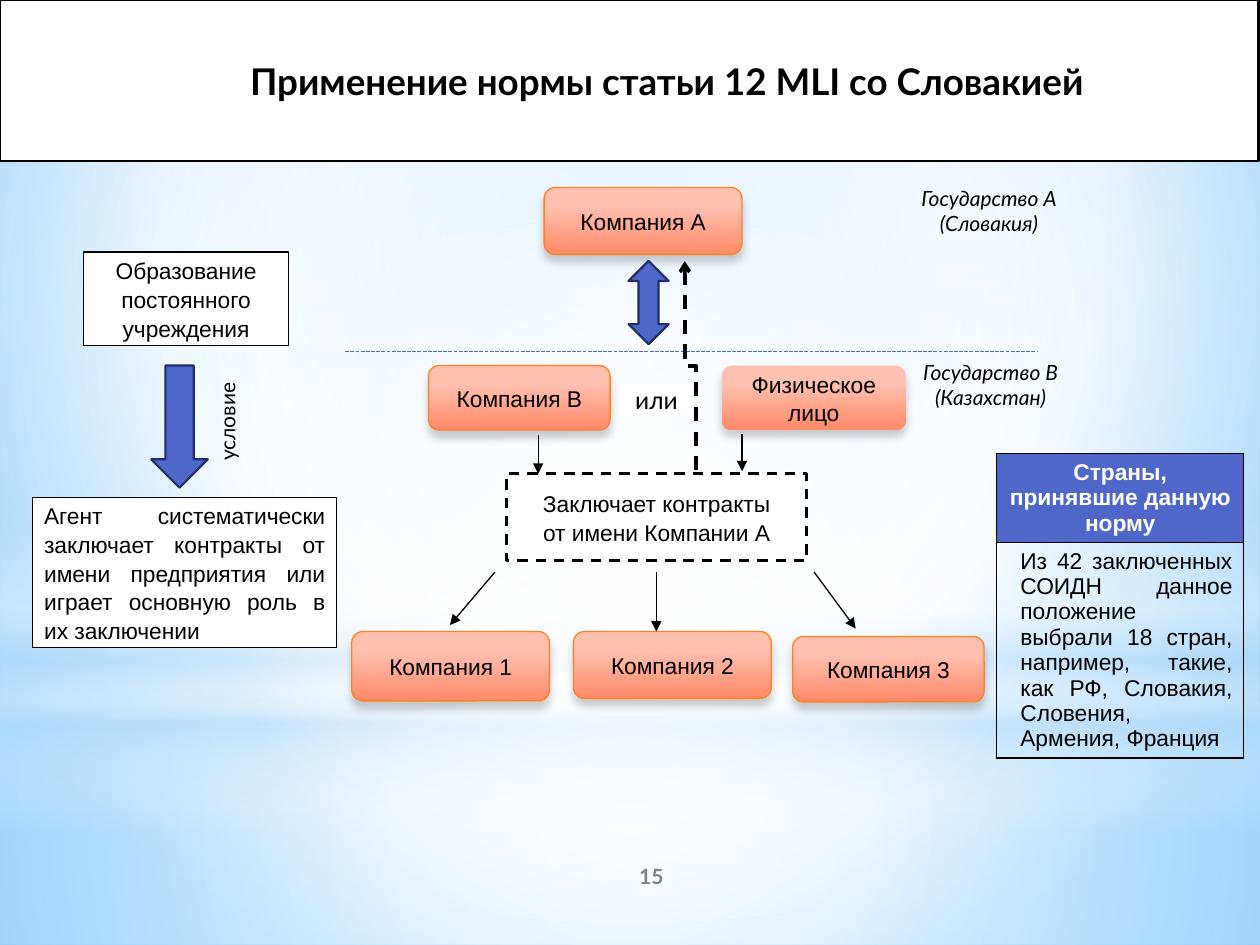
from dataclasses import dataclass
from typing import Optional

from lxml.etree import SubElement
from pptx import Presentation
from pptx.dml.color import RGBColor
from pptx.enum.dml import MSO_LINE
from pptx.enum.shapes import MSO_CONNECTOR, MSO_SHAPE
from pptx.enum.text import MSO_ANCHOR, PP_ALIGN
from pptx.oxml import parse_xml
from pptx.oxml.ns import nsdecls, qn
from pptx.util import Cm, Pt

COLORS = {
    "black": "000000", "white": "FFFFFF", "grey": "808080",
    "blue": "4E67C8", "navy": "1F2E69", "orange": "FF8021",
    "peach": "FFC0AF", "coral": "FF8968",
    "sky": "9ED5FF", "pale": "B4DCFA", "azure": "5BB9FF",
}
CENTRE = (50, 50, 50, 50)
CARD_STOPS = [(28, "peach"), (100, "coral")]


@dataclass
class Box:
    at: tuple  # left, top, width, height in cm
    text: str = ""
    shape: Optional[MSO_SHAPE] = MSO_SHAPE.RECTANGLE  # None for a text box
    fill: Optional[str] = "white"
    line: Optional[str] = "black"
    weight: float = 0.75
    dash: Optional[MSO_LINE] = None
    size: float = 13
    font: str = "Arial"
    color: str = "black"
    bold: bool = False
    italic: bool = False
    align: PP_ALIGN = PP_ALIGN.CENTER
    left_inset: float = 0.23
    spacing: float = 1.05
    rotation: float = 0


@dataclass
class Arrow:
    start: tuple
    end: tuple
    kind: MSO_CONNECTOR = MSO_CONNECTOR.STRAIGHT
    color: str = "black"
    weight: float = 0.75
    dash: Optional[MSO_LINE] = None
    head: Optional[str] = "triangle"
    rotation: int = 0


def rgb(name: str) -> RGBColor:
    return RGBColor.from_string(COLORS[name])


def set_gradient(fill, parent, stops: list, focus: Optional[tuple] = None) -> None:
    """Stops are (position, colour[, opacity]); without a focus the gradient runs downwards."""
    fill.gradient()
    xml = ""
    for pos, color, *opacity in stops:
        alpha = f'<a:alpha val="{opacity[0] * 1000}"/>' if opacity else ""
        xml += (f'<a:gs pos="{pos * 1000}"><a:srgbClr val="{COLORS[color]}">'
                f'{alpha}</a:srgbClr></a:gs>')
    if focus:
        sides = " ".join(f'{k}="{v * 1000}"' for k, v in zip("ltrb", focus))
        shade = f'<a:path path="circle"><a:fillToRect {sides}/></a:path>'
    else:
        shade = '<a:lin ang="5400000" scaled="0"/>'
    grad = parse_xml(f'<a:gradFill {nsdecls("a")} rotWithShape="1">'
                     f'<a:gsLst>{xml}</a:gsLst>{shade}</a:gradFill>')
    parent.replace(parent.find(qn("a:gradFill")), grad)


def add_shadow(sp) -> None:
    effects = sp.element.spPr.find(qn("a:effectLst"))
    effects.append(parse_xml(
        f'<a:outerShdw {nsdecls("a")} blurRad="63500" dist="50800" dir="5400000" rotWithShape="0">'
        '<a:srgbClr val="000000"><a:alpha val="20000"/></a:srgbClr></a:outerShdw>'))


def style_font(font, size: float, name: str, color: str, bold=False, italic=False) -> None:
    font.size, font.name = Pt(size), name
    font.bold, font.italic = bold, italic
    font.color.rgb = rgb(color)


def write_text(tf, box: Box) -> None:
    tf.word_wrap = True
    tf.vertical_anchor = MSO_ANCHOR.MIDDLE
    tf.margin_left, tf.margin_right = Cm(box.left_inset), Cm(0.23)
    tf.margin_top = tf.margin_bottom = Cm(0.1)
    tf.text = box.text
    for p in tf.paragraphs:
        p.alignment = box.align
        p.line_spacing = box.spacing
        style_font(p.font, box.size, box.font, box.color, box.bold, box.italic)


def draw_box(s, box: Box):
    at = [Cm(v) for v in box.at]
    if box.shape is None:
        sp = s.shapes.add_textbox(*at)
    else:
        sp = s.shapes.add_shape(box.shape, *at)
        sp.shadow.inherit = False
        if box.fill:
            sp.fill.solid()
            sp.fill.fore_color.rgb = rgb(box.fill)
        if box.line:
            sp.line.color.rgb = rgb(box.line)
            sp.line.width = Pt(box.weight)
            sp.line.dash_style = box.dash
        else:
            sp.line.fill.background()
    sp.rotation = box.rotation
    if box.text:
        write_text(sp.text_frame, box)
    return sp


def draw_card(s, text: str, at: tuple, line: Optional[str] = "orange") -> None:
    sp = draw_box(s, Box(at, text, MSO_SHAPE.ROUNDED_RECTANGLE, None, line))
    set_gradient(sp.fill, sp.element.spPr, CARD_STOPS)
    add_shadow(sp)


def draw_glow(s, at: tuple, stops: list, focus=CENTRE, shape=MSO_SHAPE.RECTANGLE) -> None:
    sp = draw_box(s, Box(at, shape=shape, fill=None, line=None))
    set_gradient(sp.fill, sp.element.spPr, stops, focus)


def draw_arrow(s, arrow: Arrow) -> None:
    c = s.shapes.add_connector(arrow.kind, *[Cm(v) for v in arrow.start + arrow.end])
    c.line.color.rgb = rgb(arrow.color)
    c.line.width = Pt(arrow.weight)
    c.line.dash_style = arrow.dash
    spPr = c.element.spPr
    if arrow.head:
        SubElement(spPr.find(qn("a:ln")), qn("a:tailEnd"), type=arrow.head)
    SubElement(spPr, qn("a:effectLst"))
    if arrow.rotation:
        spPr.find(qn("a:xfrm")).set("rot", str(arrow.rotation * 60000))


def draw_table(s) -> None:
    heights = [1.75, 4.34]
    table = s.shapes.add_table(2, 1, Cm(20.09), Cm(9.14), Cm(4.98), Cm(sum(heights))).table
    texts = ["Страны, принявшие данную норму",
             "Из 42 заключенных СОИДН данное положение выбрали 18 стран, "
             "например, такие, как РФ, Словакия, Словения, Армения, Франция"]
    for i, (text, height) in enumerate(zip(texts, heights)):
        header = i == 0
        table.rows[i].height = Cm(height)
        cell = table.cell(i, 0)
        cell.text = text
        cell.margin_left = cell.margin_right = Cm(0.23)
        p = cell.text_frame.paragraphs[0]
        p.alignment = PP_ALIGN.CENTER if header else PP_ALIGN.JUSTIFY
        style_font(p.font, 13, "Arial", "white" if header else "black", header)
        if header:
            cell.fill.solid()
            cell.fill.fore_color.rgb = rgb("blue")
        else:
            cell.fill.background()
            p.space_before = Pt(6.8)
            p._p.get_or_add_pPr().set("marL", str(Cm(0.25)))
        for k, side in enumerate("LRTB"):
            cell._tc.get_or_add_tcPr().insert(k, parse_xml(
                f'<a:ln{side} {nsdecls("a")} w="12700"><a:solidFill>'
                f'<a:srgbClr val="{COLORS["black"]}"/></a:solidFill></a:ln{side}>'))


def main() -> None:
    prs = Presentation()
    prs.slide_width, prs.slide_height = Cm(25.4), Cm(19.05)
    s = prs.slides.add_slide(prs.slide_layouts[6])

    # Background with soft glows
    fill = s.background.fill
    fill.solid()
    set_gradient(fill, s.element.find(".//" + qn("p:bgPr")),
                 [(0, "sky"), (60, "white"), (100, "azure")], (20, 10, 20, 60))
    draw_glow(s, (0, 14.17, 25.4, 4.88), [(0, "white", 91), (37, "white", 76), (100, "pale", 79)])
    draw_glow(s, (0, 0, 25.4, 14.17), [(0, "white", 89), (48, "white", 62), (100, "pale", 79)])
    draw_glow(s, (0, 10.46, 25.4, 6.35),
              [(0, "white", 0), (29, "white", 30), (45, "pale", 40),
               (55, "white", 26), (65, "pale", 60), (100, "white", 0)], None)
    draw_glow(s, (0, 4.45, 25.4, 14.17), [(0, "white"), (56, "white", 0)], shape=MSO_SHAPE.OVAL)

    # Companies and the border between the states
    draw_arrow(s, Arrow((6.96, 7.09), (20.9, 7.09), color="blue", dash=MSO_LINE.SQUARE_DOT, head=None))
    for text, at in [
        ("Компания 3", (15.98, 12.83, 3.86, 1.32)),
        ("Компания 2", (11.56, 12.73, 3.99, 1.35)),
        ("Компания 1", (7.09, 12.73, 3.99, 1.4)),
        ("Компания В", (8.64, 7.37, 3.66, 1.3)),
        ("Компания А", (10.97, 3.78, 3.99, 1.35)),
    ]:
        draw_card(s, text, at)
    draw_card(s, "Физическое лицо", (14.55, 7.37, 3.71, 1.3), None)
    draw_table(s)

    # Plain boxes, labels and block arrows
    label = dict(shape=None, font="Lato", size=12, spacing=1)
    block = dict(fill="blue", line="navy", weight=1.25)
    for box in [
        Box((18.06, 3.76, 3.76, 0.97), "Государство А\n(Словакия)", italic=True, **label),
        Box((18.14, 7.11, 3.66, 1.3), "Государство В (Казахстан)", italic=True, **label),
        Box((12.55, 7.77, 1.37, 0.56), "или", line="white", weight=1.25, size=14, font="Lato"),
        Box((1.68, 5.08, 4.14, 1.88), "Образование постоянного учреждения"),
        Box((0.66, 10.03, 6.12, 3.02), "Агент систематически заключает контракты от имени "
            "предприятия или играет основную роль в их заключении", align=PP_ALIGN.JUSTIFY),
        Box((12.67, 5.26, 0.81, 1.68), shape=MSO_SHAPE.UP_DOWN_ARROW, **block),
        Box((3.05, 7.37, 1.14, 2.46), shape=MSO_SHAPE.DOWN_ARROW, **block),
        Box((0, 0, 25.37, 3.25), "Применение нормы статьи 12 MLI со Словакией",
            weight=1.25, size=21, font="Lato", bold=True, left_inset=1.75, spacing=1),
        Box((3.43, 8.18, 2.29, 0.64), "условие", rotation=270, **label),
        Box((10.21, 9.55, 6.05, 1.75), "Заключает контракты\nот имени Компании А",
            weight=1.5, dash=MSO_LINE.DASH),
        Box((10.59, 17.15, 5.08, 1.02), "15", color="grey", bold=True, **label),
    ]:
        draw_box(s, box)

    # Arrows to and from the contracts box
    for arrow in [
        Arrow((9.98, 11.53), (9.07, 12.6)),
        Arrow((13.23, 11.53), (13.23, 12.73)),
        Arrow((16.41, 11.53), (17.25, 12.67)),
        Arrow((10.85, 8.76), (10.85, 9.55)),
        Arrow((14.96, 8.74), (14.96, 9.5)),
        Arrow((11.81, 7.49), (16.03, 7.26), MSO_CONNECTOR.ELBOW, weight=2,
              dash=MSO_LINE.DASH, head="arrow", rotation=270),
    ]:
        draw_arrow(s, arrow)

    prs.save("out.pptx")


if __name__ == "__main__":
    main()
